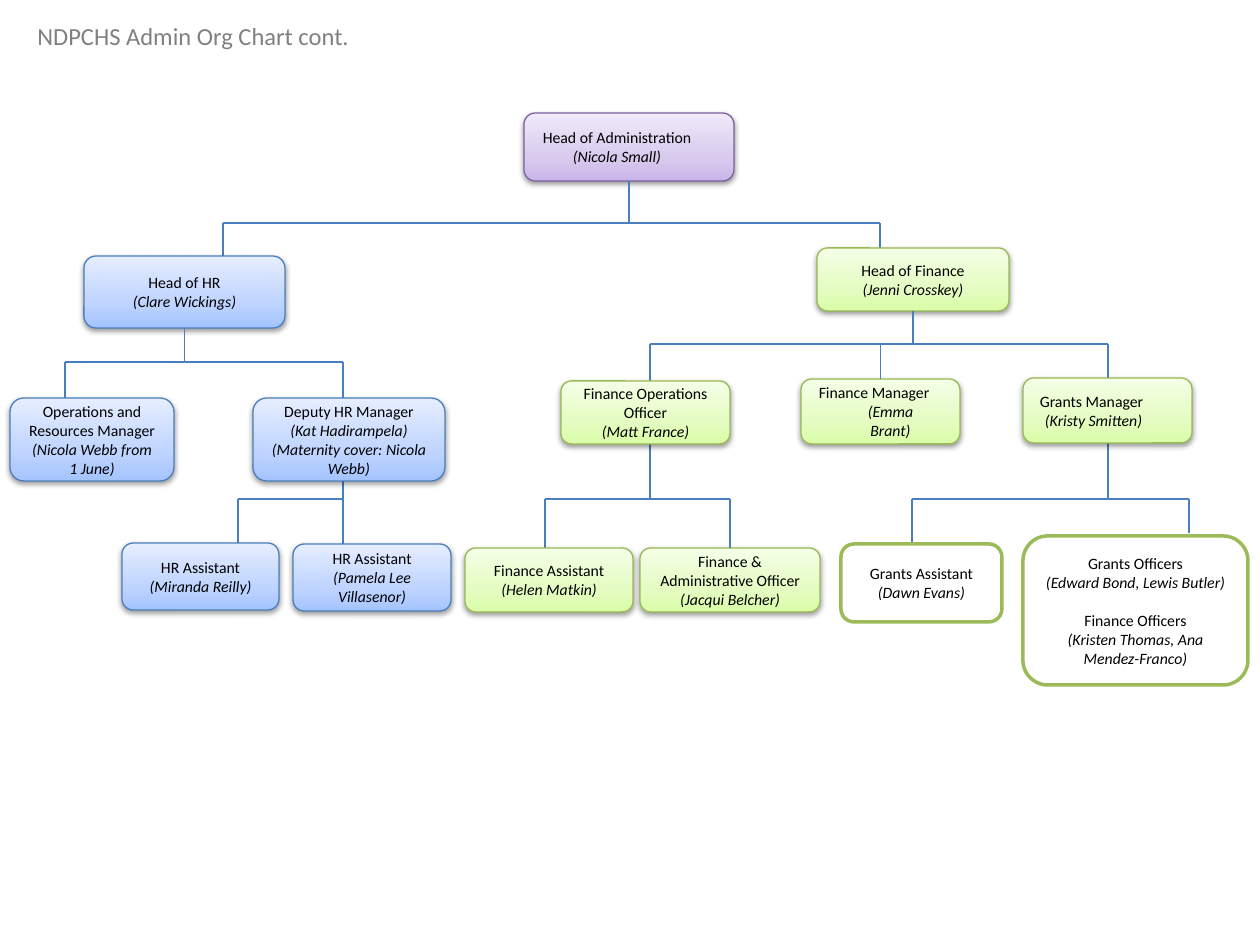
from copy import deepcopy

from lxml import etree
from pptx import Presentation
from pptx.dml.color import RGBColor
from pptx.enum.shapes import MSO_CONNECTOR, MSO_SHAPE
from pptx.enum.text import MSO_ANCHOR, PP_ALIGN
from pptx.oxml.ns import qn
from pptx.util import Pt

ROUNDED = MSO_SHAPE.ROUNDED_RECTANGLE
STRAIGHT = MSO_CONNECTOR.STRAIGHT
MIDDLE = MSO_ANCHOR.MIDDLE
LEFT, CENTER = PP_ALIGN.LEFT, PP_ALIGN.CENTER
TOP, BOTTOM = 0, 2
PX = 914400 / 126

THEME = {
    "font": "Calibri",
    "title_size": 14,
    "box_size": 9,
    "title": "808080",
    "text": "000000",
    "rule": "4B7EBC",
    "shadow": "000000",
    "admin": {"line": "7D60A0", "width": 0.75, "fill": ["F0EAF9", "D8CBEE", "C9B5E8"]},
    "finance": {"line": "98B955", "width": 0.75, "fill": ["F5FFE7", "E4FCC2", "DAFDA7"]},
    "hr": {"line": "4B7EBC", "width": 0.75, "fill": ["E6EEFF", "BFD4FF", "A4C4FF"]},
    "grants": {"line": "9BBB59", "width": 2, "fill": ["FFFFFF"]},
}


def add_text(paragraph, text, size=THEME["box_size"], color=THEME["text"],
             align=CENTER, shift=0, gap=0):
    paragraph.alignment = align
    if shift:
        side = "marL" if shift > 0 else "marR"
        paragraph._p.get_or_add_pPr().set(side, str(int(abs(shift) * PX)))
    if gap:
        paragraph.space_before = Pt(gap)
    run = paragraph.add_run()
    run.text = text
    run.font.name = THEME["font"]
    run.font.size = Pt(size)
    run.font.italic = text.startswith("(")
    run.font.color.rgb = RGBColor.from_string(color)


def add_line(x1, y1, x2, y2):
    line = slide.shapes.add_connector(STRAIGHT, *(int(v * PX) for v in (x1, y1, x2, y2)))
    line.line.color.rgb = RGBColor.from_string(THEME["rule"])
    line.line.width = Pt(0.75)
    etree.SubElement(line._element.spPr, qn("a:effectLst"))
    return line


prs = Presentation()
prs.slide_width, prs.slide_height = int(1260 * PX), int(945 * PX)
slide = prs.slides.add_slide(prs.slide_layouts[6])

heading = slide.shapes.add_textbox(*(int(v * PX) for v in (25, 0, 780, 72))).text_frame
heading.word_wrap = True
heading.vertical_anchor = MIDDLE
add_text(heading.paragraphs[0], "NDPCHS Admin Org Chart cont.",
         size=THEME["title_size"], color=THEME["title"], align=LEFT)

rails = [(223, 880, 223), (65, 343, 362), (650, 1108, 344),
         (238, 343, 499), (545, 730, 499), (912, 1189, 499)]
for left, right, y in rails:
    add_line(left, y, right, y)

drops = [(223, 223, 256), (880, 223, 255), (65, 362, 423), (343, 362, 593),
         (650, 344, 499), (1108, 344, 499), (238, 499, 563), (545, 499, 564),
         (912, 499, 542), (1189, 499, 533)]
for x, top, bottom in drops:
    add_line(x, top, x, bottom)

posts = [
    ("head_admin", "admin", (524, 113, 210, 68),
     [("Head of Administration", {"shift": -24}), ("(Nicola Small)", {})]),
    ("head_finance", "finance", (817, 248, 192, 63),
     [("Head of Finance", {}), ("(Jenni Crosskey)", {})]),
    ("finance_manager", "finance", (801, 379, 159, 65),
     [("Finance Manager", {"shift": -13}), ("(Emma Brant)", {"shift": 33})]),
    ("grants_manager", "finance", (1023, 378, 169, 65),
     [("Grants Manager", {"shift": -32}), ("(Kristy Smitten)", {"shift": 4})]),
    ("finance_admin", "finance", (640, 548, 180, 64),
     [("Finance & Administrative Officer", {}), ("(Jacqui Belcher)", {})]),
    ("officers", "grants", (1023, 536, 225, 149),
     [("Grants Officers", {}), ("(Edward Bond, Lewis Butler)", {}),
      ("Finance Officers", {"gap": 11}), ("(Kristen Thomas, Ana Mendez-Franco)", {})]),
    ("grants_assistant", "grants", (841, 544, 161, 78),
     [("Grants Assistant", {}), ("(Dawn Evans)", {})]),
    ("finance_operations", "finance", (561, 381, 169, 63),
     [("Finance Operations Officer", {}), ("(Matt France)", {})]),
    ("finance_assistant", "finance", (465, 548, 168, 64),
     [("Finance Assistant", {}), ("(Helen Matkin)", {})]),
    ("head_hr", "hr", (84, 256, 201, 72),
     [("Head of HR", {}), ("(Clare Wickings)", {})]),
    ("operations", "hr", (10, 398, 164, 83),
     [("Operations and Resources Manager", {}), ("(Nicola Webb from 1 June)", {})]),
    ("deputy_hr", "hr", (253, 398, 192, 83),
     [("Deputy HR Manager", {}),
      ("(Kat Hadirampela) (Maternity cover: Nicola Webb)", {})]),
    ("hr_assistant_right", "hr", (293, 544, 158, 67),
     [("HR Assistant", {}), ("(Pamela Lee Villasenor)", {})]),
    ("hr_assistant_left", "hr", (122, 543, 157, 67),
     [("HR Assistant", {}), ("(Miranda Reilly)", {})]),
]

staff = {}
for post, team, bounds, wording in posts:
    box = slide.shapes.add_shape(ROUNDED, *(int(v * PX) for v in bounds))
    staff[post] = box
    look = THEME[team]
    box.line.color.rgb = RGBColor.from_string(look["line"])
    box.line.width = Pt(look["width"])
    box.shadow.inherit = False
    properties = box._element.spPr
    if len(look["fill"]) == 1:
        box.fill.solid()
        box.fill.fore_color.rgb = RGBColor.from_string(look["fill"][0])
    else:
        box.fill.gradient()
        box.fill.gradient_angle = 270
        stop_list = properties.find(".//" + qn("a:gsLst"))
        stop_list.append(deepcopy(stop_list[-1]))
        for stop, place, color in zip(box.fill.gradient_stops, (0, 0.65, 1), look["fill"]):
            stop.position = place
            stop.color.rgb = RGBColor.from_string(color)
        shadow = etree.SubElement(properties.find(qn("a:effectLst")), qn("a:outerShdw"),
                                  blurRad="40000", dist="20000", dir="5400000", rotWithShape="0")
        shade = etree.SubElement(shadow, qn("a:srgbClr"), val=THEME["shadow"])
        etree.SubElement(shade, qn("a:alpha"), val="38000")
    frame = box.text_frame
    frame.word_wrap = True
    frame.vertical_anchor = MIDDLE
    for index, (text, layout) in enumerate(wording):
        paragraph = frame.add_paragraph() if index else frame.paragraphs[0]
        add_text(paragraph, text, **layout)

stems = [("head_admin", BOTTOM, 223), ("head_hr", BOTTOM, 362), ("head_finance", BOTTOM, 344),
         ("finance_manager", TOP, 344), ("finance_admin", TOP, 499)]
for post, side, rail in stems:
    box = staff[post]
    center = (box.left + box.width / 2) / PX
    add_line(center, rail, center, rail).begin_connect(box, side)

prs.save("out.pptx")
